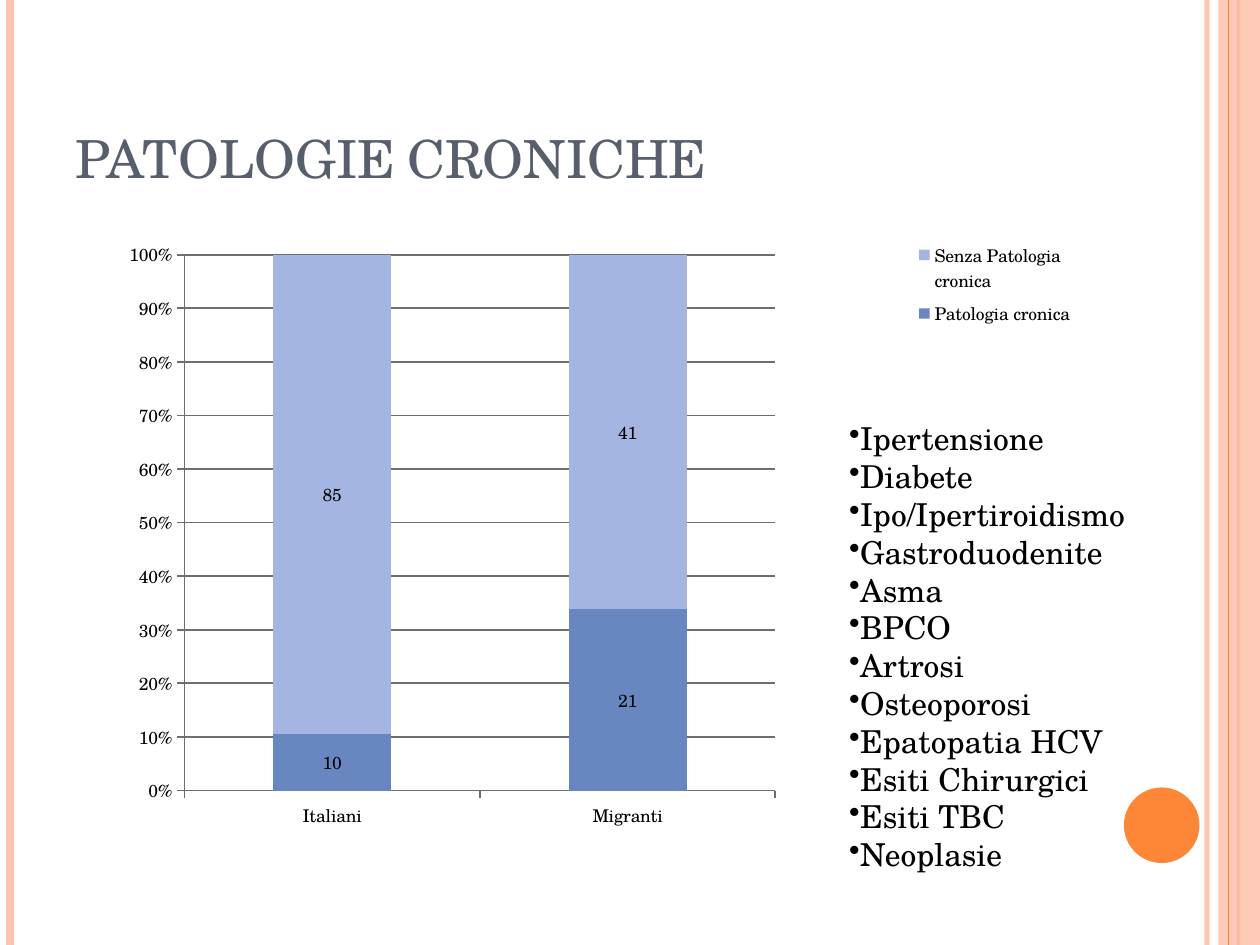
from pptx import Presentation
from pptx.chart.data import CategoryChartData
from pptx.dml.color import RGBColor
from pptx.enum.chart import XL_CHART_TYPE as ChartType, XL_LEGEND_POSITION as LegendPos
from pptx.enum.chart import XL_TICK_MARK as Tick
from pptx.enum.shapes import MSO_CONNECTOR as Connector, MSO_SHAPE as Shape
from pptx.enum.text import MSO_ANCHOR as Anchor, MSO_AUTO_SIZE as AutoSize, PP_ALIGN as Align
from pptx.oxml import parse_xml
from pptx.oxml.ns import nsdecls, qn
from pptx.util import Inches, Pt

WIDTH, HEIGHT = 10, 7.5
FONT = "TeX Gyre Schola"
BLACK, GREY, SLATE = "000000", "6E6E6E", "575F6D"
ORANGE, PEACH = "FE8637", "FEC3AE"

TITLE = "PATOLOGIE CRONICHE"
GROUPS = ["Italiani", "Migranti"]
SERIES = [  # name, patients per group, colour
    ("Patologia cronica", (10, 21), "6887C0"),
    ("Senza Patologia cronica", (85, 41), "A3B5E0"),
]
DISEASES = [
    "Ipertensione", "Diabete", "Ipo/Ipertiroidismo", "Gastroduodenite",
    "Asma", "BPCO", "Artrosi", "Osteoporosi", "Epatopatia HCV",
    "Esiti Chirurgici", "Esiti TBC", "Neoplasie",
]
STRIPES = [  # x, colour, weight, opacity in percent
    (9.58, PEACH, 3, 93),
    (0.08, PEACH, 4.5, 100),
    (9.83, ORANGE, 1.5, 100),
    (9.75, ORANGE, 0.75, 100),
]
LEFT, BODY_WIDTH = 0.5, 8.17
TITLE_BOX = (LEFT, 0.3, BODY_WIDTH, 1.25)
CHART_BOX = (LEFT, 1.75, BODY_WIDTH, 5.33)
LIST_BOX = (6.64, 3.28, 2.5, 4.04)
BAND_BOX = (9.67, 0, WIDTH - 9.67, HEIGHT)
DISC_BOX = (8.92, 6.25, 0.6, 0.6)
# Shares of the chart's size
PLOT_AREA = (0.118, 0.051, 0.574, 0.798)
LEGEND_AREA = (0.81, 0.02, 0.19, 0.15)


def rgb(value):
    return RGBColor.from_string(value)


def inches(box):
    return [Inches(part) for part in box]


def style(font, size, color):
    font.name, font.size, font.color.rgb = FONT, Pt(size), rgb(color)


def set_opacity(drawn, percent):
    for color in drawn.element.spPr.iter(qn("a:srgbClr")):
        color.append(parse_xml(f'<a:alpha {nsdecls("a")} val="{percent * 1000}"/>'))


def add_stripe(slide, x, color, weight, opacity):
    stripe = slide.shapes.add_connector(
        Connector.STRAIGHT, Inches(x), 0, Inches(x), Inches(HEIGHT))
    stripe.line.color.rgb = rgb(color)
    stripe.line.width = Pt(weight)
    stripe.element.spPr.append(parse_xml(f'<a:effectLst {nsdecls("a")}/>'))
    if opacity < 100:
        set_opacity(stripe, opacity)


def add_filled(slide, preset, box, color):
    filled = slide.shapes.add_shape(preset, *inches(box))
    filled.shadow.inherit = False
    filled.fill.solid()
    filled.fill.fore_color.rgb = rgb(color)
    filled.line.fill.background()
    return filled


def layout_xml(area, inner=False):
    """Manual chart layout from left, top, width and height shares."""
    target = '<c:layoutTarget val="inner"/>' if inner else ""
    modes = '<c:xMode val="edge"/><c:yMode val="edge"/>'
    sizes = "".join(f'<c:{key} val="{share}"/>' for key, share in zip("xywh", area))
    return parse_xml(f'<c:layout {nsdecls("c")}><c:manualLayout>{target}{modes}{sizes}'
                     "</c:manualLayout></c:layout>")


def add_chart(slide):
    data = CategoryChartData()
    data.categories = GROUPS
    for name, values, _ in SERIES:
        data.add_series(name, values)
    chart = slide.shapes.add_chart(
        ChartType.COLUMN_STACKED_100, *inches(CHART_BOX), data).chart
    style(chart.font, 10, BLACK)
    chart.has_title = False

    plot = chart.plots[0]
    plot.vary_by_categories = False
    plot.gap_width, plot.overlap = 150, 100
    for series, (_, _, color) in zip(plot.series, SERIES):
        series.format.fill.solid()
        series.format.fill.fore_color.rgb = rgb(color)
        series.data_labels.show_value = True

    values = chart.value_axis
    values.has_major_gridlines = True
    values.maximum_scale, values.major_unit = 1, 0.1
    values.tick_labels.number_format = "0%"
    values.tick_labels.number_format_is_linked = False
    chart.category_axis.major_tick_mark = Tick.OUTSIDE
    values.major_tick_mark = Tick.OUTSIDE
    for ruled in (values, chart.category_axis, values.major_gridlines):
        ruled.format.line.color.rgb = rgb(GREY)
        ruled.format.line.width = Pt(1)

    chart.has_legend = True
    legend = chart.legend
    legend.position = LegendPos.RIGHT
    legend.include_in_layout = False
    legend_xml = chart.element.find(".//" + qn("c:legend"))
    for old in legend_xml.findall(qn("c:layout")):
        legend_xml.remove(old)
    legend_xml.find(qn("c:legendPos")).addnext(layout_xml(LEGEND_AREA))
    plot_xml = chart.element.find(".//" + qn("c:plotArea"))
    for old in plot_xml.findall(qn("c:layout")):
        plot_xml.remove(old)
    plot_xml.insert(0, layout_xml(PLOT_AREA, inner=True))


def add_title(slide):
    title = slide.shapes.title
    title.left, title.top, title.width, title.height = inches(TITLE_BOX)
    frame = title.text_frame
    frame.vertical_anchor = Anchor.BOTTOM
    frame.auto_size = AutoSize.NONE
    heading = frame.paragraphs[0]
    heading.alignment = Align.LEFT
    run = heading.add_run()
    run.text = TITLE
    style(run.font, 30, SLATE)
    run.font._element.set("cap", "small")


def add_diseases(slide):
    frame = slide.shapes.add_textbox(*inches(LIST_BOX)).text_frame
    frame.word_wrap = True
    frame.auto_size = AutoSize.SHAPE_TO_FIT_TEXT
    for row, disease in enumerate(DISEASES):
        item = frame.add_paragraph() if row else frame.paragraphs[0]
        item._p.get_or_add_pPr().append(
            parse_xml(f'<a:buChar {nsdecls("a")} char="•"/>'))
        run = item.add_run()
        run.text = disease
        style(run.font, 18, BLACK)


def main():
    deck = Presentation()
    deck.slide_width, deck.slide_height = Inches(WIDTH), Inches(HEIGHT)
    slide = deck.slides.add_slide(deck.slide_layouts.get_by_name("Title Only"))
    for stripe in STRIPES[:3]:
        add_stripe(slide, *stripe)
    set_opacity(add_filled(slide, Shape.RECTANGLE, BAND_BOX, PEACH), 87)
    add_stripe(slide, *STRIPES[3])
    add_filled(slide, Shape.OVAL, DISC_BOX, ORANGE)
    add_title(slide)
    add_chart(slide)
    add_diseases(slide)
    deck.save("out.pptx")


if __name__ == "__main__":
    main()
